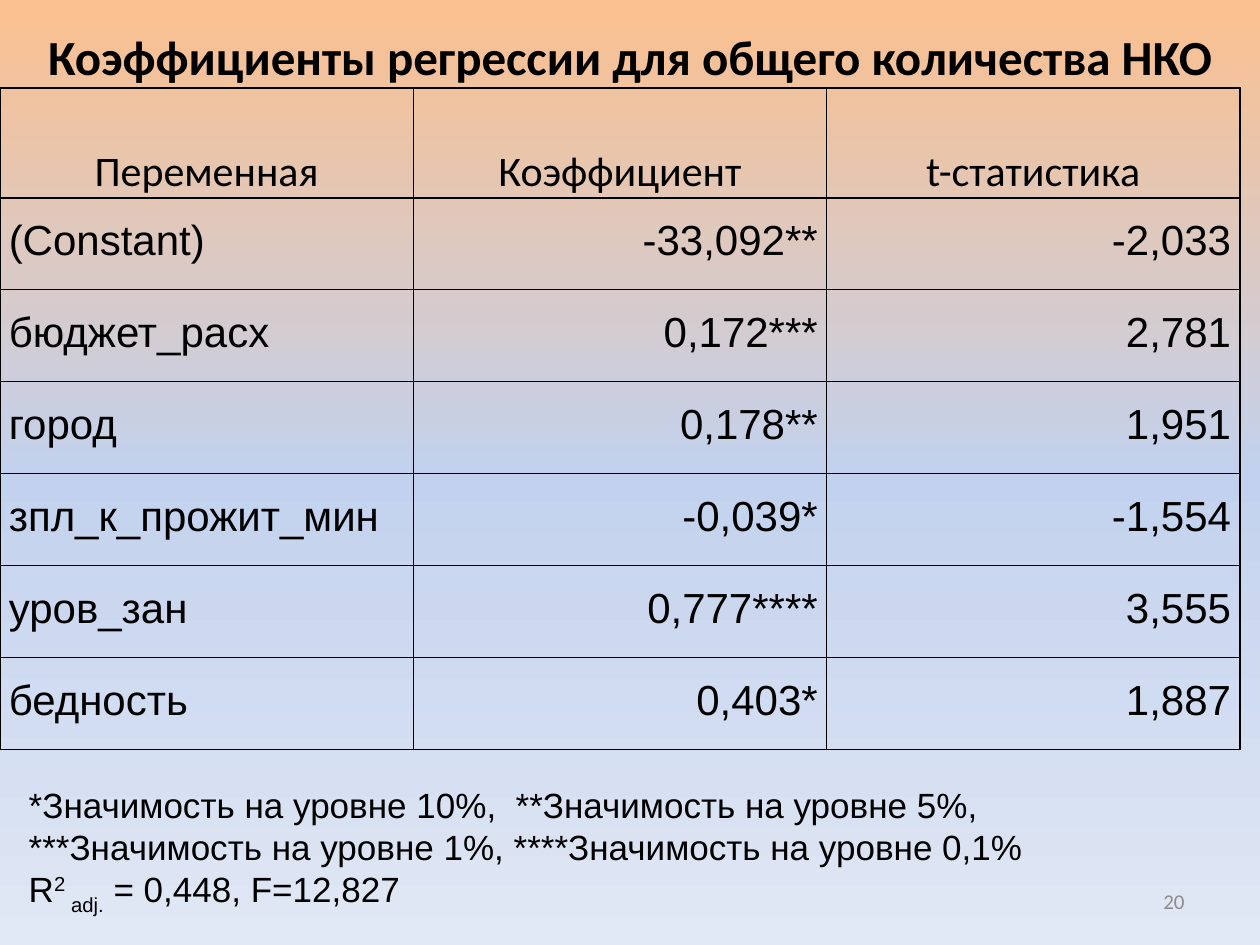
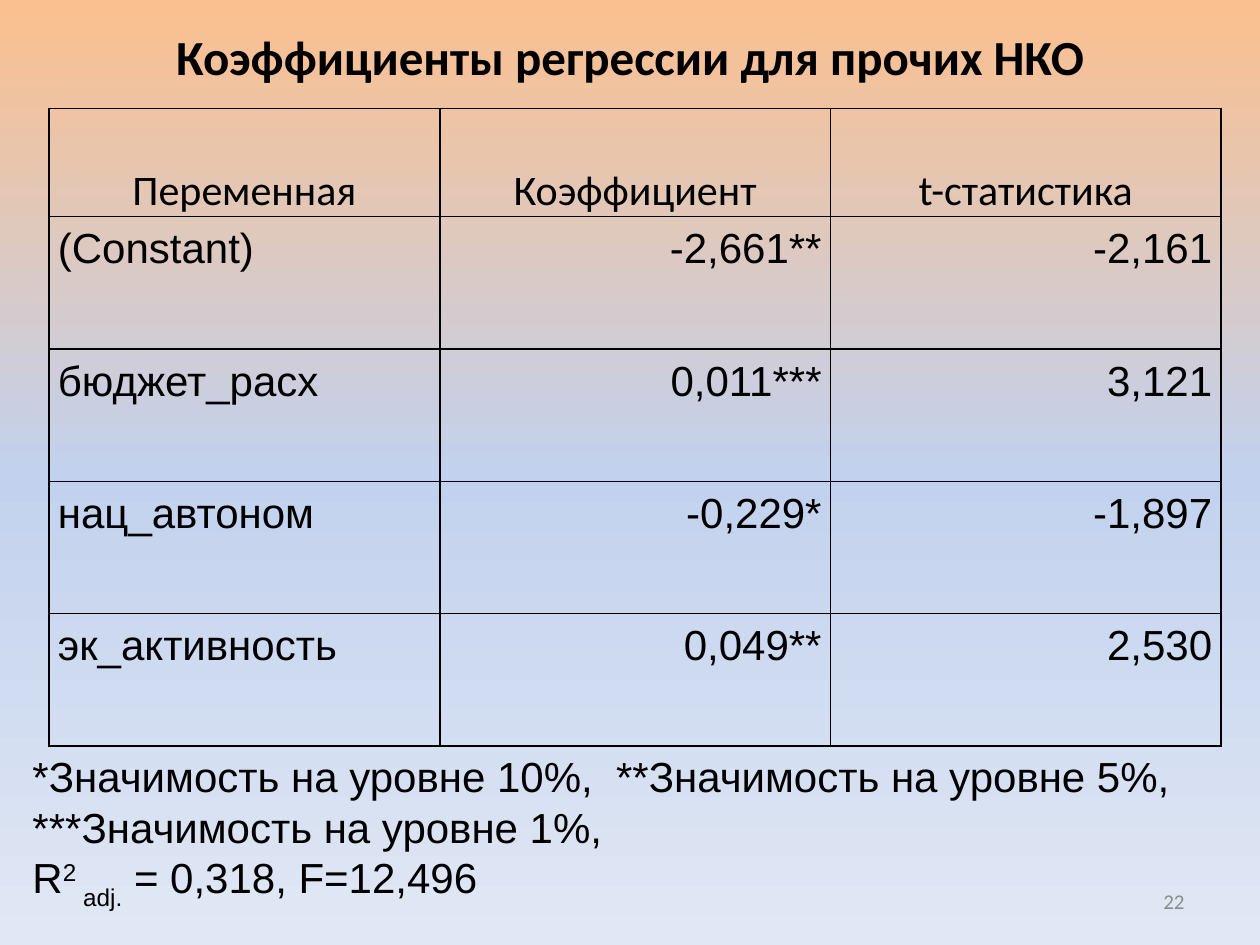
from lxml.etree import SubElement
from pptx import Presentation
from pptx.dml.color import RGBColor
from pptx.enum.text import MSO_ANCHOR, PP_ALIGN
from pptx.oxml import parse_xml
from pptx.oxml.ns import nsdecls, qn
from pptx.util import Emu, Inches, Pt

BLACK, GREY = "000000", "8C8C8C"
BACKGROUND = [(1, "FAC090"), (50, "C2D1ED"), (100, "E1E8F5")]
HEADING_FONT, BODY_FONT = "Calibri", "Arial"
HEADERS = ("Переменная", "Коэффициент", "t-статистика")
SIGNIFICANCE = "*Значимость на уровне 10%,  **Значимость на уровне 5%,"

# Boxes are left, top, width, height in inches; lead is the points above each value.
REGRESSIONS = [
    dict(
        title="Коэффициенты регрессии для общего количества НКО",
        rows=[
            ("(Constant)", "-33,092**", "-2,033"),
            ("бюджет_расх", "0,172***", "2,781"),
            ("город", "0,178**", "1,951"),
            ("зпл_к_прожит_мин", "-0,039*", "-1,554"),
            ("уров_зан", "0,777****", "3,555"),
            ("бедность", "0,403*", "1,887"),
        ],
        table_at=(0, 0.7, 9.84), header_height=0.87, row_height=0.73, lead=22,
        notes=[SIGNIFICANCE, "***Значимость на уровне 1%, ****Значимость на уровне 0,1%"],
        fit=" = 0,448, F=12,827",
        notes_at=(0.13, 6.19, 9, 1.11), notes_size=20, number="20",
    ),
    dict(
        title="Коэффициенты регрессии для прочих НКО",
        rows=[
            ("(Constant)", "-2,661**", "-2,161"),
            ("бюджет_расх", "0,011***", "3,121"),
            ("нац_автоном", "-0,229*", "-1,897"),
            ("эк_активность", "0,049**", "2,530"),
        ],
        table_at=(0.39, 0.86, 9.3), header_height=0.86, row_height=1.05, lead=16,
        notes=[SIGNIFICANCE, "***Значимость на уровне 1%,"],
        fit=" = 0,318, F=12,496",
        notes_at=(0.16, 5.94, 9.84, 1.31), notes_size=24, number="22",
    ),
]


def add_text(para, text, size=24, font=BODY_FONT, color=BLACK, bold=False, shift=0,
             align=PP_ALIGN.LEFT, spacing=None):
    """Append a span; shift raises or lowers it by a percentage."""
    span = para.add_run()
    span.text = text
    span.font.size, span.font.name, span.font.bold = Pt(size), font, bold
    span.font.color.rgb = RGBColor.from_string(color)
    if shift:
        span._r.get_or_add_rPr().set("baseline", str(shift * 1000))
    para.alignment = align
    para.line_spacing = spacing


def add_box(page, at, anchor=MSO_ANCHOR.MIDDLE):
    frame = page.shapes.add_textbox(*map(Inches, at)).text_frame
    frame.word_wrap = True
    frame.vertical_anchor = anchor
    return frame


def set_background(master):
    stops = "".join(f'<a:gs pos="{share * 1000}"><a:srgbClr val="{color}"/></a:gs>'
                    for share, color in BACKGROUND)
    common = master.element.cSld
    for old in common.findall(qn("p:bg")):
        common.remove(old)
    common.insert(0, parse_xml(
        f'<p:bg {nsdecls("p", "a")}><p:bgPr><a:gradFill rotWithShape="1">'
        f'<a:gsLst>{stops}</a:gsLst><a:lin ang="5400000" scaled="0"/></a:gradFill>'
        '<a:effectLst/></p:bgPr></p:bg>'))


def set_borders(cell):
    properties = cell._tc.get_or_add_tcPr()
    for index, side in enumerate(("lnL", "lnR", "lnT", "lnB")):
        line = SubElement(properties, qn(f"a:{side}"), w=str(Pt(1)))
        SubElement(SubElement(line, qn("a:solidFill")), qn("a:srgbClr"), val=BLACK)
        properties.insert(index, line)


def add_coefficients(page, regression):
    left, top, width = regression["table_at"]
    content = [HEADERS, *regression["rows"]]
    heights = [regression["header_height"]] + [regression["row_height"]] * len(regression["rows"])
    table = page.shapes.add_table(len(content), len(HEADERS), Inches(left), Inches(top),
                                  Inches(width), Inches(sum(heights))).table
    table.first_row = table.horz_banding = False
    for row, height in zip(table.rows, heights):
        row.height = Inches(height)
    for row_index, values in enumerate(content):
        for column, value in enumerate(values):
            cell = table.cell(row_index, column)
            cell.fill.background()
            set_borders(cell)
            cell.margin_left = cell.margin_right = Inches(0.07)
            cell.margin_top = cell.margin_bottom = Emu(0)
            para = cell.text_frame.paragraphs[0]
            if row_index == 0:
                cell.vertical_anchor = MSO_ANCHOR.BOTTOM
                add_text(para, value, font=HEADING_FONT, align=PP_ALIGN.CENTER, spacing=1.15)
            else:
                cell.margin_top = Pt(regression["lead"])
                add_text(para, value, spacing=Pt(16),
                         align=PP_ALIGN.RIGHT if column else PP_ALIGN.LEFT)


def add_notes(page, regression):
    frame = add_box(page, regression["notes_at"])
    lines = [[(note, 0)] for note in regression["notes"]]
    lines.append([("R", 0), ("2 ", 30), ("adj.", -30), (regression["fit"], 0)])
    for index, line in enumerate(lines):
        para = frame.add_paragraph() if index else frame.paragraphs[0]
        for text, shift in line:
            add_text(para, text, size=regression["notes_size"], shift=shift)


def add_regression(deck, regression):
    page = deck.slides.add_slide(deck.slide_layouts[6])
    title = add_box(page, (0, 0.16, 10, 0.57), MSO_ANCHOR.TOP)
    add_text(title.paragraphs[0], regression["title"], size=28, font=HEADING_FONT,
             bold=True, align=PP_ALIGN.CENTER)
    add_coefficients(page, regression)
    add_notes(page, regression)
    number = add_box(page, (7.17, 6.95, 2.33, 0.4))
    add_text(number.paragraphs[0], regression["number"], size=12, font=HEADING_FONT,
             color=GREY, align=PP_ALIGN.RIGHT)


def main():
    deck = Presentation()
    deck.slide_width, deck.slide_height = Inches(10), Inches(7.5)
    set_background(deck.slide_master)
    for regression in REGRESSIONS:
        add_regression(deck, regression)
    deck.save("out.pptx")


if __name__ == "__main__":
    main()
